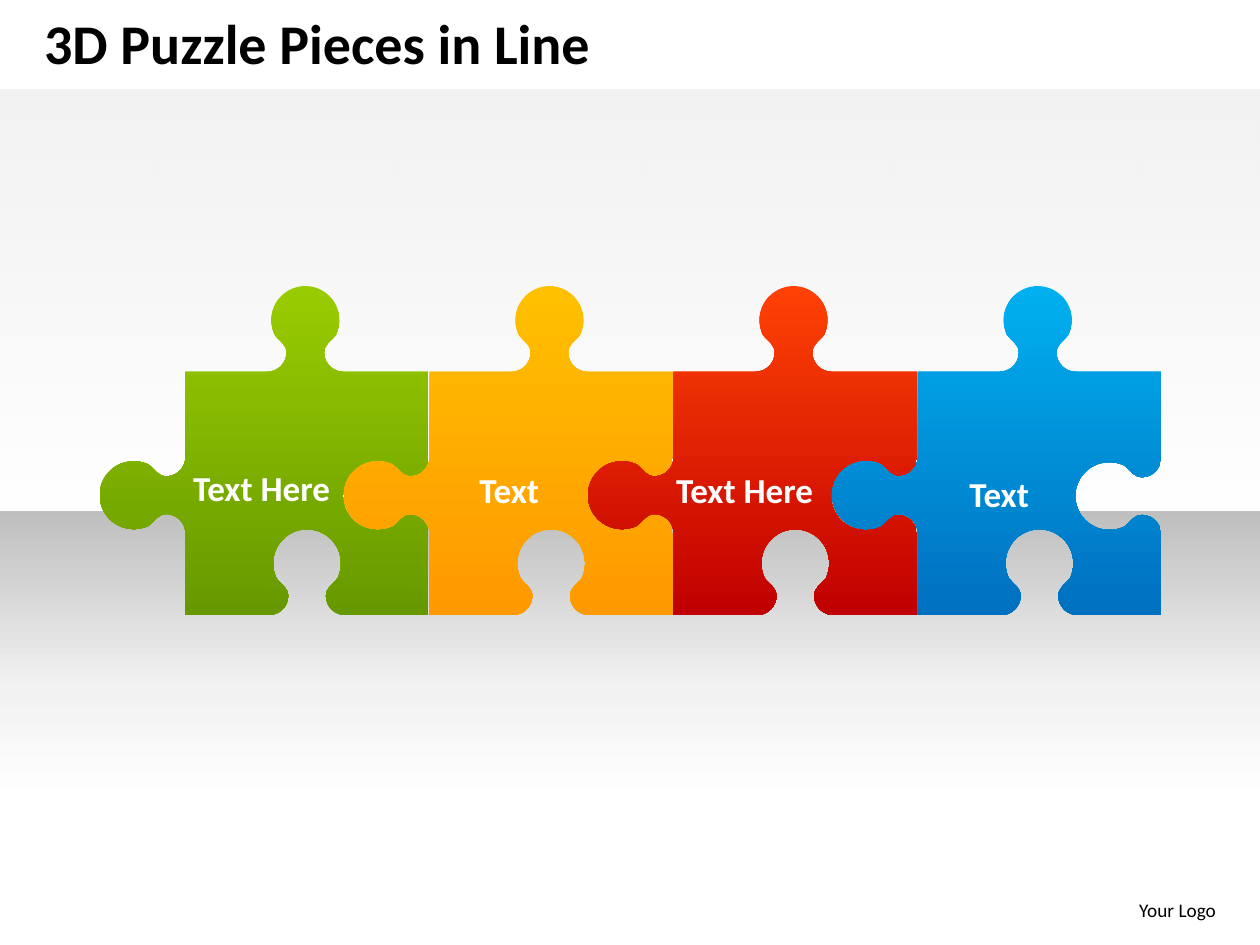
from lxml import etree
from pptx import Presentation
from pptx.dml.color import RGBColor
from pptx.enum import shapes, text
from pptx.oxml import ns
from pptx.util import Pt

BLACK = RGBColor(0x00, 0x00, 0x00)
WHITE = RGBColor(0xFF, 0xFF, 0xFF)
PALE_GREY = RGBColor(0xF2, 0xF2, 0xF2)
MID_GREY = RGBColor(0xBF, 0xBF, 0xBF)
LIME = RGBColor(0x99, 0xCC, 0x00)
GREEN = RGBColor(0x66, 0x99, 0x00)
YELLOW = RGBColor(0xFF, 0xC0, 0x00)
ORANGE = RGBColor(0xFF, 0x99, 0x00)
SCARLET = RGBColor(0xFF, 0x41, 0x05)
DARK_RED = RGBColor(0xC0, 0x00, 0x00)
SKY = RGBColor(0x00, 0xB0, 0xF0)
BLUE = RGBColor(0x00, 0x70, 0xC0)

SIDE = 139
PITCH = 139.5
FIRST_LEFT = 106
PIECE_TOP = 212.5

# Half a knob as (along the side, outward) Bezier points, from its foot to its tip.
HALF_KNOB = [
    (-21.8, 0), (-15.8, 0), (-10.8, 5), (-10.8, 10.8),
    (-10.8, 15.8), (-14.4, 17), (-17.6, 21.2),
    (-18.7, 23.8), (-19.4, 26.6), (-19.4, 29.5),
    (-19.4, 40.3), (-10.8, 49), (0, 49),
]
KNOB = HALF_KNOB + [(-along, out) for along, out in HALF_KNOB[-2::-1]]

# Clockwise sides: corner, knob centre, direction along the side and of the knob.
SIDES = [
    ((0, 0), (68.5, 0), (1, 0), (0, -1)),
    ((SIDE, 0), (SIDE, 71), (0, 1), (-1, 0)),
    ((SIDE, SIDE), (69.5, SIDE), (-1, 0), (0, -1)),
    ((0, SIDE), (0, 70.5), (0, -1), (-1, 0)),
]

# Label, its left and top, then the colours at the top and bottom of the piece.
PIECES = [
    ("Text Here", 98.5, 263, LIME, GREEN),
    ("Text", 240, 264, YELLOW, ORANGE),
    ("Text Here", 374.5, 264, SCARLET, DARK_RED),
    ("Text", 520, 266.5, SKY, BLUE),
]


def piece_outline(left, top):
    """Return (end point, curve handles) steps; straight steps have no handles."""
    steps = []
    for corner, centre, along, out in SIDES:
        knob = [(Pt(left + centre[0] + a * along[0] + o * out[0]),
                 Pt(top + centre[1] + a * along[1] + o * out[1]))
                for a, o in KNOB]
        steps.append(((Pt(left + corner[0]), Pt(top + corner[1])), []))
        steps.append((knob[0], []))
        steps += [(knob[i + 2], knob[i:i + 2])
                  for i in range(1, len(knob), 3)]
    return steps


def write_text(frame, words, size, color, bold=False,
               align=text.PP_ALIGN.LEFT):
    frame.word_wrap = True
    frame.auto_size = text.MSO_AUTO_SIZE.NONE
    frame.vertical_anchor = text.MSO_ANCHOR.TOP
    para = frame.paragraphs[0]
    para.alignment = align
    span = para.add_run()
    span.text = words
    span.font.name = "Calibri"
    span.font.size = Pt(size)
    span.font.bold = bold
    span.font.color.rgb = color


class PuzzleSlide:
    def __init__(self, deck):
        self.page = deck.slides.add_slide(deck.slide_layouts[5])

    def paint(self, shape, stops):
        """Fill from top to bottom with (percent, colour, opacity percent) stops."""
        shape.shadow.inherit = False
        shape.line.fill.background()
        shape.fill.gradient()
        shape.fill.gradient_angle = 270
        stop_list = shape.fill.gradient_stops[0]._gs.getparent()
        for old_stop in list(stop_list):
            stop_list.remove(old_stop)
        for percent, color, opacity in stops:
            stop = etree.SubElement(stop_list, ns.qn("a:gs"),
                                    pos=str(percent * 1000))
            tint = etree.SubElement(stop, ns.qn("a:srgbClr"), val=str(color))
            if opacity < 100:
                etree.SubElement(tint, ns.qn("a:alpha"),
                                 val=str(opacity * 1000))

    def title(self, words, left, top, width, height):
        box = self.page.shapes.title
        box.left, box.top = Pt(left), Pt(top)
        box.width, box.height = Pt(width), Pt(height)
        write_text(box.text_frame, words, 32, BLACK, bold=True)

    def band(self, top, height, stops):
        box = self.page.shapes.add_shape(
            shapes.MSO_SHAPE.RECTANGLE, Pt(0), Pt(top), Pt(720), Pt(height))
        self.paint(box, stops)

    def piece(self, left, top, upper, lower):
        (start, _), *steps = piece_outline(left, top)
        builder = self.page.shapes.build_freeform(*start)
        builder.add_line_segments([end for end, _ in steps], close=True)
        shape = builder.convert_to_shape()
        self.bend(shape, [handles for _, handles in steps])
        self.paint(shape, [(0, upper, 100), (100, lower, 100)])

    def bend(self, shape, handle_pairs):
        """Turn the straight steps that have handles into Bezier curves."""
        lines = list(shape._element.iter(ns.qn("a:lnTo")))
        for line, handles in zip(lines, handle_pairs):
            if not handles:
                continue
            curve = etree.Element(ns.qn("a:cubicBezTo"))
            for x, y in handles:
                etree.SubElement(curve, ns.qn("a:pt"),
                                 x=str(int(x - shape.left)),
                                 y=str(int(y - shape.top)))
            curve.append(line[0])
            line.getparent().replace(line, curve)

    def label(self, words, left, top, width, height, **style):
        box = self.page.shapes.add_textbox(
            Pt(left), Pt(top), Pt(width), Pt(height))
        write_text(box.text_frame, words, **style)


def main():
    deck = Presentation()
    deck.slide_width, deck.slide_height = Pt(720), Pt(540)
    slide = PuzzleSlide(deck)
    slide.band(292, 170, [(0, MID_GREY, 100), (60, PALE_GREY, 100),
                          (99, WHITE, 100)])
    slide.band(51, 242.5, [(0, PALE_GREY, 100), (100, PALE_GREY, 0)])
    slide.title("3D Puzzle Pieces in Line", 18, 1.5, 702, 46)
    slide.label("Your Logo", 618, 510, 84, 21, size=11, color=BLACK,
                align=text.PP_ALIGN.RIGHT)
    for index, (_, _, _, upper, lower) in enumerate(PIECES):
        slide.piece(FIRST_LEFT + index * PITCH, PIECE_TOP, upper, lower)
    for words, left, top, _, _ in PIECES:
        slide.label(words, left, top, 102, 31.5, size=20, color=WHITE,
                    bold=True, align=text.PP_ALIGN.CENTER)
    deck.save("out.pptx")


if __name__ == "__main__":
    main()
